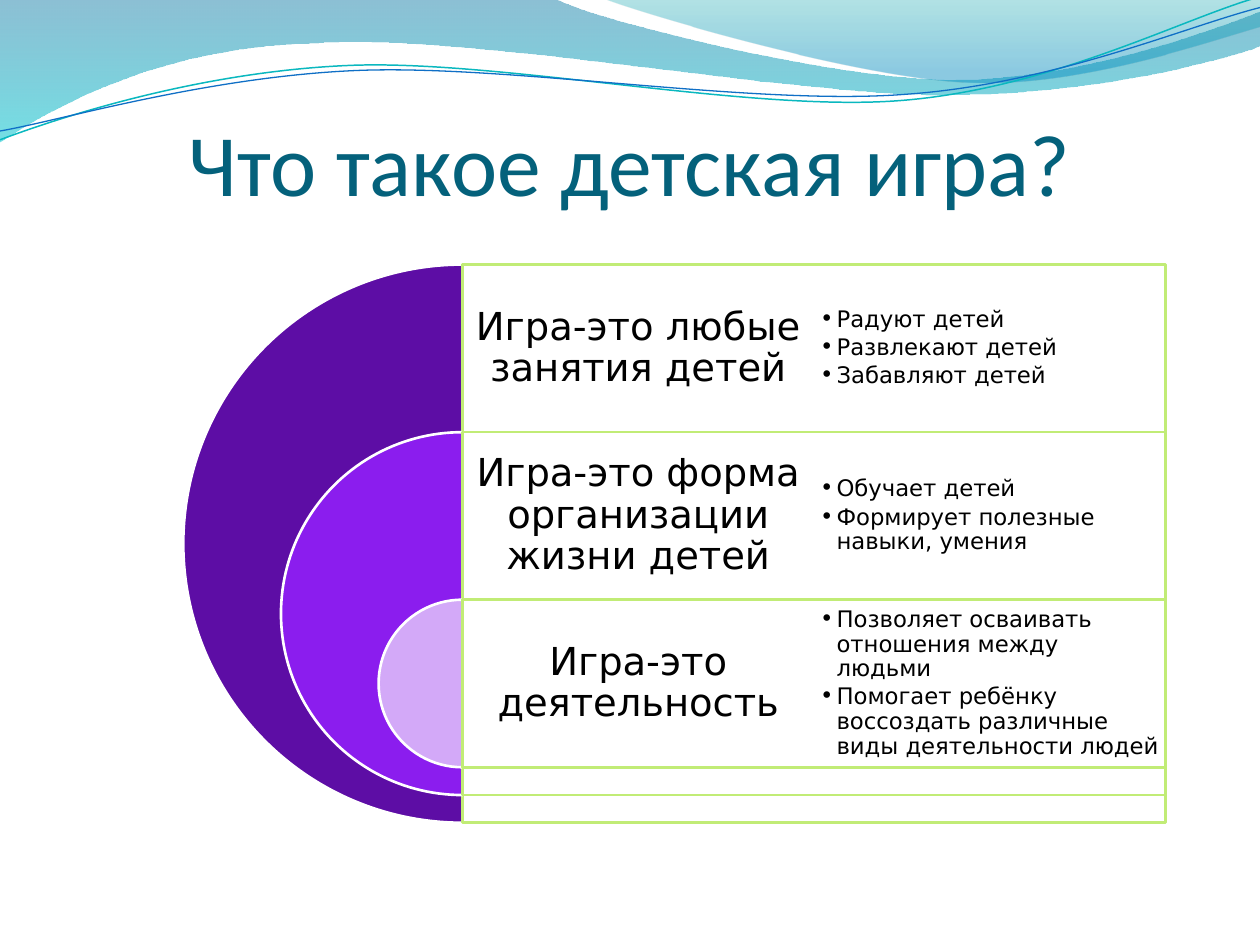
from dataclasses import dataclass

from lxml.etree import SubElement
from pptx import Presentation
from pptx.dml.color import RGBColor as Rgb
from pptx.enum.shapes import MSO_SHAPE as Preset
from pptx.enum.text import MSO_ANCHOR as Anchor, PP_ALIGN as Align
from pptx.oxml.ns import qn
from pptx.util import Inches, Pt


@dataclass(frozen=True)
class Theme:
    """Colours, fonts and type sizes of the slide."""
    title: str = "04617B"
    text: str = "000000"
    white: str = "FFFFFF"
    border: str = "C1EC76"
    circles: tuple = ("5D0DA5", "8B1DEE", "D3A9F8")
    wide_wave: tuple = ((0, "0074A1", 45), (1, "00C6CF", 55))
    right_wave: tuple = ((0, "00A1A9", 30), (0.8, "008BBF", 45))
    teal_line: str = "0AB8BF"
    blue_line: str = "0F6FC6"
    title_font: str = "Calibri"
    body_font: str = "DejaVu Sans"
    title_size: int = 50
    heading_size: int = 22
    bullet_size: int = 13


THEME = Theme()
CENTER, TOP, ROW, HALF = 3.67, 2.1, 1.33, 2.79
DIAMETER, SHRINK = 4.43, 1.55
HANG = Inches(0.13)

WIDE_WAVE = (
    (0, 0), (4.4, -0.01),
    (4.76, 0.17, 6.64, 0.63, 7.58, 0.63), (8.53, 0.63, 9.58, 0.26, 10, 0.09),
    (10.01, 0.36),
    (9.83, 0.44, 8.7, 0.76, 7.46, 0.75), (6.22, 0.75, 3.82, 0.28, 2.57, 0.34),
    (1.29, 0.36, 0.46, 0.83, -0.01, 1.13), (0, 0),
)
RIGHT_WAVE = (
    (4.79, -0.01),
    (5.09, 0.11, 6.82, 0.62, 7.69, 0.65), (8.56, 0.69, 9.61, 0.32, 10, 0.21),
    (10, 0), (4.79, -0.01),
)
TEAL_CURVE = (
    (0, 1.11),
    (0.48, 0.93, 1.58, 0.57, 2.77, 0.52), (3.95, 0.47, 5.93, 0.89, 7.13, 0.8),
    (8.33, 0.71, 9.38, 0.15, 9.98, -0.02),
)
BLUE_CURVE = (
    (0, 1.04),
    (0.47, 0.96, 1.64, 0.61, 2.83, 0.56), (4.03, 0.51, 5.97, 0.84, 7.17, 0.75),
    (8.36, 0.67, 9.41, 0.21, 10, 0.06),
)
ROWS = (
    ("Игра-это любые занятия детей",
     ("Радуют детей", "Развлекают детей", "Забавляют детей")),
    ("Игра-это форма организации жизни детей",
     ("Обучает детей", "Формирует полезные навыки, умения")),
    ("Игра-это деятельность",
     ("Позволяет осваивать отношения между людьми",
      "Помогает ребёнку воссоздать различные виды деятельности людей")),
)


def bend(shape, steps):
    """Join the line segments of each six-number step into a cubic curve."""
    segments = iter(list(shape._element.spPr.iter(qn("a:lnTo"))))
    for step in steps[1:]:
        first, *others = [next(segments) for _ in range(len(step) // 2)]
        if others:
            first.tag = qn("a:cubicBezTo")
            for segment in others:
                first.append(segment[0])
                segment.getparent().remove(segment)


def set_alpha(shape, percents):
    """Give the colours of a shape their opacities, in order."""
    colors = list(shape._element.spPr.iter(qn("a:srgbClr")))
    for color, percent in zip(colors, percents):
        SubElement(color, qn("a:alpha")).set("val", str(percent * 1000))


def set_line(shape, color, width):
    """Set the outline colour and width of a shape."""
    shape.line.color.rgb = Rgb.from_string(color)
    shape.line.width = Pt(width)


def add_outline(page, steps, close):
    """Draw a curved outline without shadow."""
    points = [(Inches(step[i]), Inches(step[i + 1]))
              for step in steps for i in range(0, len(step), 2)]
    builder = page.shapes.build_freeform(*points[0])
    builder.add_line_segments(points[1:], close=close)
    shape = builder.convert_to_shape()
    bend(shape, steps)
    shape.shadow.inherit = False
    return shape


def add_wave(page, steps, stops):
    """Draw a filled wave with a vertical gradient."""
    wave = add_outline(page, steps, True)
    wave.fill.gradient()
    wave.fill.gradient_angle = 270
    for stop, (position, color, _) in zip(wave.fill.gradient_stops, stops):
        stop.position = position
        stop.color.rgb = Rgb.from_string(color)
    set_alpha(wave, [alpha for _, _, alpha in stops])
    wave.line.fill.background()


def add_curve(page, steps, color, width):
    """Draw an open curved line."""
    curve = add_outline(page, steps, False)
    curve.fill.background()
    set_line(curve, color, width)


def add_preset(page, kind, bounds, fill, line, alpha=100):
    """Draw a preset shape with a solid fill and an outline."""
    shape = page.shapes.add_shape(kind, *map(Inches, bounds))
    shape.shadow.inherit = False
    shape.fill.solid()
    shape.fill.fore_color.rgb = Rgb.from_string(fill)
    if alpha < 100:
        set_alpha(shape, [alpha])
    set_line(shape, line, 1.5)
    return shape


def add_text(page, bounds, lines, font, size, color, insets,
             anchor=Anchor.MIDDLE, spacing=0.9, bullets=False):
    """Write paragraphs, centred or bulleted, in a text box."""
    box = page.shapes.add_textbox(*map(Inches, bounds))
    frame = box.text_frame
    frame.word_wrap = True
    frame.vertical_anchor = anchor
    frame.margin_left, frame.margin_top, frame.margin_right, frame.margin_bottom = map(
        Inches, insets)
    for index, line in enumerate(lines):
        para = frame.paragraphs[0] if index == 0 else frame.add_paragraph()
        para.text = line
        para.line_spacing = spacing
        para.font.name = font
        para.font.size = Pt(size)
        para.font.color.rgb = Rgb.from_string(color)
        if bullets:
            add_bullet(para, font, size)
        else:
            para.alignment = Align.CENTER


def add_bullet(para, font, size):
    """Give a paragraph a hanging round bullet."""
    para.space_after = Pt(round(size * 0.15))
    props = para._p.get_or_add_pPr()
    props.set("marL", str(HANG))
    props.set("indent", str(-HANG))
    defaults = props.find(qn("a:defRPr"))
    for tag, name, value in (("a:buFont", "typeface", font), ("a:buChar", "char", "•")):
        mark = SubElement(props, qn(tag))
        mark.set(name, value)
        defaults.addprevious(mark)


def add_row(page, index, heading):
    """Draw one half circle with its frame and heading."""
    top = TOP + index * ROW
    size = DIAMETER - index * SHRINK
    pie = add_preset(page, Preset.PIE, (CENTER - size / 2, top, size, size),
                     THEME.circles[index], THEME.white)
    pie.adjustments[0], pie.adjustments[1] = 54, 162
    add_preset(page, Preset.RECTANGLE, (CENTER, top, 2 * HALF, size),
               THEME.white, THEME.border, 90)
    add_text(page, (CENTER, top, HALF, ROW), [heading], THEME.body_font,
             THEME.heading_size, THEME.text, [0.09] * 4)


def main():
    """Build and save the slide."""
    deck = Presentation()
    deck.slide_width, deck.slide_height = Inches(10), Inches(7.5)
    page = deck.slides.add_slide(deck.slide_layouts[6])
    add_wave(page, WIDE_WAVE, THEME.wide_wave)
    add_wave(page, RIGHT_WAVE, THEME.right_wave)
    add_curve(page, TEAL_CURVE, THEME.teal_line, 0.85)
    add_curve(page, BLUE_CURVE, THEME.blue_line, 0.75)
    for index, (heading, _) in enumerate(ROWS):
        add_row(page, index, heading)
    for index, (_, points) in enumerate(ROWS):
        add_text(page, (CENTER + HALF, TOP + index * ROW, HALF, ROW), points,
                 THEME.body_font, THEME.bullet_size, THEME.text, [0.05] * 4, bullets=True)
    add_text(page, (0.5, 0.77, 9, 0.93), ["Что такое детская игра?"], THEME.title_font,
             THEME.title_size, THEME.title, (0, 0.05, 0, 0), Anchor.BOTTOM, 1.0)
    deck.save("out.pptx")


if __name__ == "__main__":
    main()
